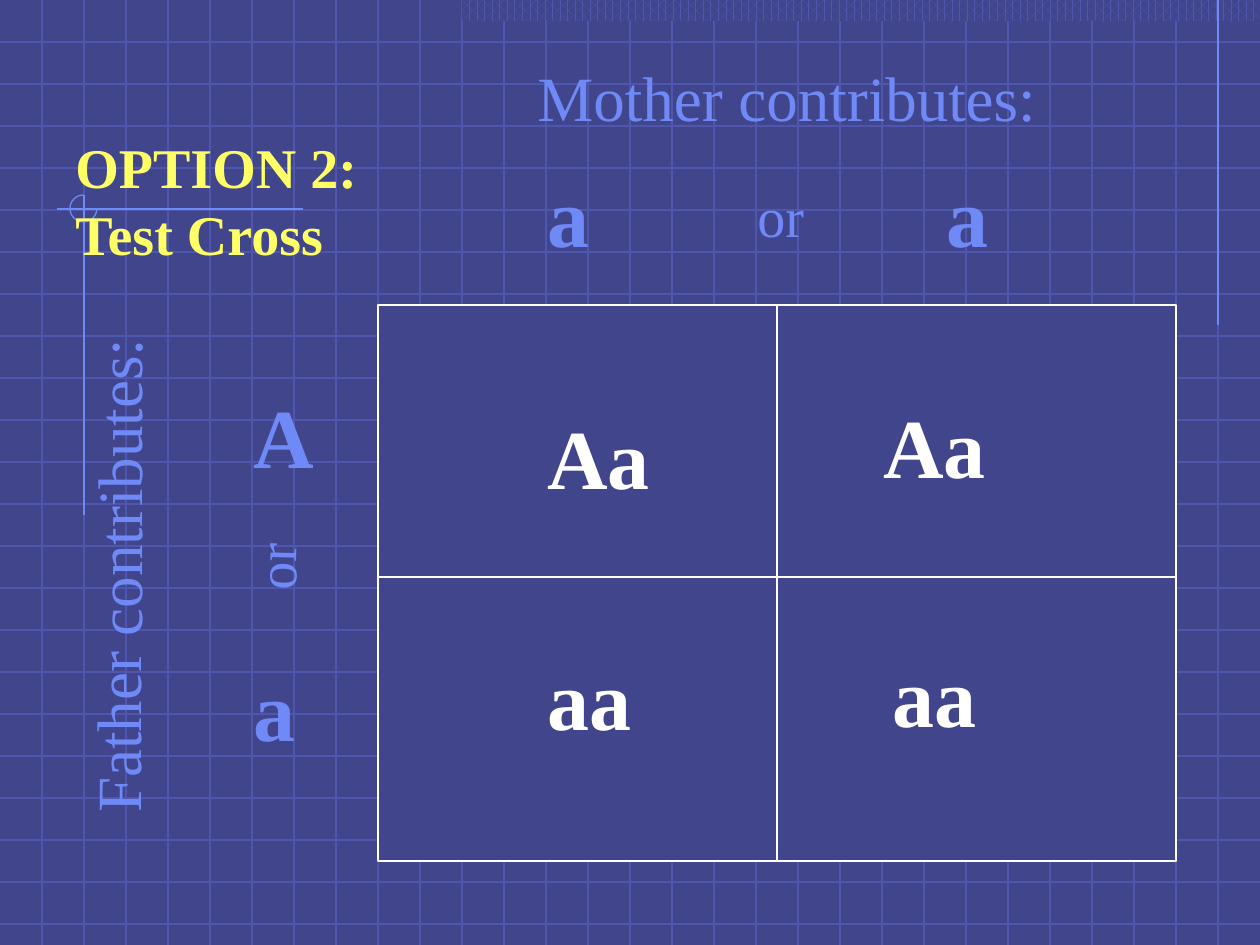
import pptx
import pptx.util
import pptx.dml.color
import pptx.enum.dml
import pptx.enum.shapes
import pptx.enum.text
import lxml.etree

PX = 914400 // 126
THEME = {
    "font": "Times New Roman",
    "background": "40458C",
    "pattern": "4F56AD",
    "accent": "6F89F7",
    "white": "FFFFFF",
    "title": "FFFF66",
    "allele": 48,
    "heading": 36,
    "label": 32,
    "thin": 0.75,
    "border": 1,
}


def rgb(name):
    return pptx.dml.color.RGBColor.from_string(THEME[name])


def add_line(x1, y1, x2, y2, color, width):
    line = slide.shapes.add_connector(
        pptx.enum.shapes.MSO_CONNECTOR.STRAIGHT, x1 * PX, y1 * PX, x2 * PX, y2 * PX)
    line.line.color.rgb = rgb(color)
    line.line.width = pptx.util.Pt(THEME[width])
    lxml.etree.SubElement(line._element.spPr, pptx.oxml.ns.qn("a:effectLst"))


deck = pptx.Presentation()
deck.slide_width = pptx.util.Inches(10)
deck.slide_height = pptx.util.Inches(7.5)
slide = deck.slides.add_slide(deck.slide_layouts[6])
slide.background.fill.solid()
slide.background.fill.fore_color.rgb = rgb("background")

slide_width, slide_height, grid_step = 1260, 945, 42
for y in range(grid_step, slide_height, grid_step):
    add_line(0, y, slide_width, y, "pattern", "thin")
for x in range(grid_step, slide_width, grid_step):
    add_line(x, 0, x, slide_height, "pattern", "thin")

shape_kinds = pptx.enum.shapes.MSO_SHAPE
band = slide.shapes.add_shape(shape_kinds.RECTANGLE, 462 * PX, 0, 798 * PX, 21 * PX)
band.shadow.inherit = False
band.fill.patterned()
band.fill.pattern = pptx.enum.dml.MSO_PATTERN.PERCENT_60
band.fill.fore_color.rgb = rgb("pattern")
band.fill.back_color.rgb = rgb("background")
band.line.fill.background()

for ends in [(1218, 0, 1218, 325), (303, 209, 57, 209), (84, 195, 84, 515)]:
    add_line(*ends, "accent", "thin")

arc = slide.shapes.add_shape(shape_kinds.ARC, 70 * PX, 195 * PX, 27 * PX, 27 * PX)
arc.shadow.inherit = False
arc.adjustments[0] = 0
arc.adjustments[1] = 162
arc.fill.background()
arc.line.color.rgb = rgb("accent")
arc.line.width = pptx.util.Pt(THEME["thin"])

left, top, right, bottom = 378, 305, 1176, 861
square = slide.shapes.add_shape(
    shape_kinds.RECTANGLE, left * PX, top * PX, (right - left) * PX, (bottom - top) * PX)
square.shadow.inherit = False
square.fill.solid()
square.fill.fore_color.rgb = rgb("background")
square.line.color.rgb = rgb("white")
square.line.width = pptx.util.Pt(THEME["border"])
middle = (left + right) // 2
add_line(middle, top, middle, bottom, "white", "border")
add_line(left, 577, right, 577, "white", "border")

texts = [
    (["a"], 535, 157, 67, 113, "allele", "accent", True, 0),
    (["a"], 934, 157, 67, 113, "allele", "accent", True, 0),
    (["A"], 241, 378, 86, 113, "allele", "accent", True, 0),
    (["a"], 241, 651, 67, 113, "allele", "accent", True, 0),
    (["Aa"], 535, 399, 129, 113, "allele", "white", True, 0),
    (["aa"], 535, 640, 110, 113, "allele", "white", True, 0),
    (["Aa"], 871, 388, 129, 113, "allele", "white", True, 0),
    (["aa"], 880, 637, 110, 113, "allele", "white", True, 0),
    (["Father contributes:"], -133, 531, 500, 88, "heading", "accent", False, 270.1),
    (["Mother contributes:"], 525, 52, 524, 88, "heading", "accent", False, 0),
    (["or"], 745, 175, 72, 79, "label", "accent", False, 0),
    (["or"], 238, 527, 72, 79, "label", "accent", False, 271.4),
    (["OPTION 2:", "Test Cross"], 63, 126, 307, 147, "label", "title", True, 0),
]
for lines, x, y, width, height, size, color, bold, rotation in texts:
    box = slide.shapes.add_textbox(x * PX, y * PX, width * PX, height * PX)
    box.rotation = rotation
    frame = box.text_frame
    frame.word_wrap = False
    frame.auto_size = pptx.enum.text.MSO_AUTO_SIZE.SHAPE_TO_FIT_TEXT
    frame.text = "\n".join(lines)
    for para in frame.paragraphs:
        para.font.name = THEME["font"]
        para.font.size = pptx.util.Pt(THEME[size])
        para.font.bold = bold
        para.font.color.rgb = rgb(color)

deck.save("out.pptx")
